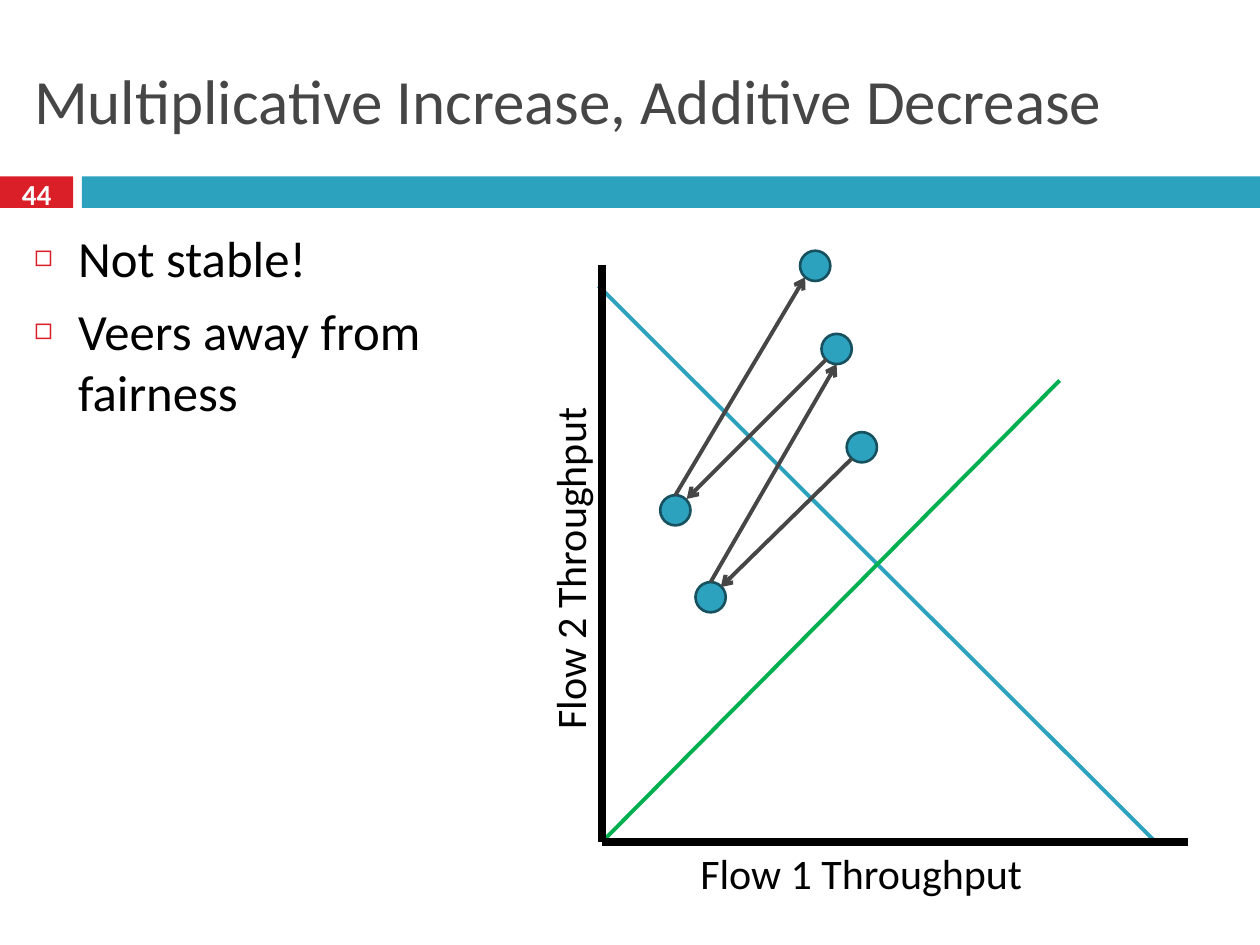
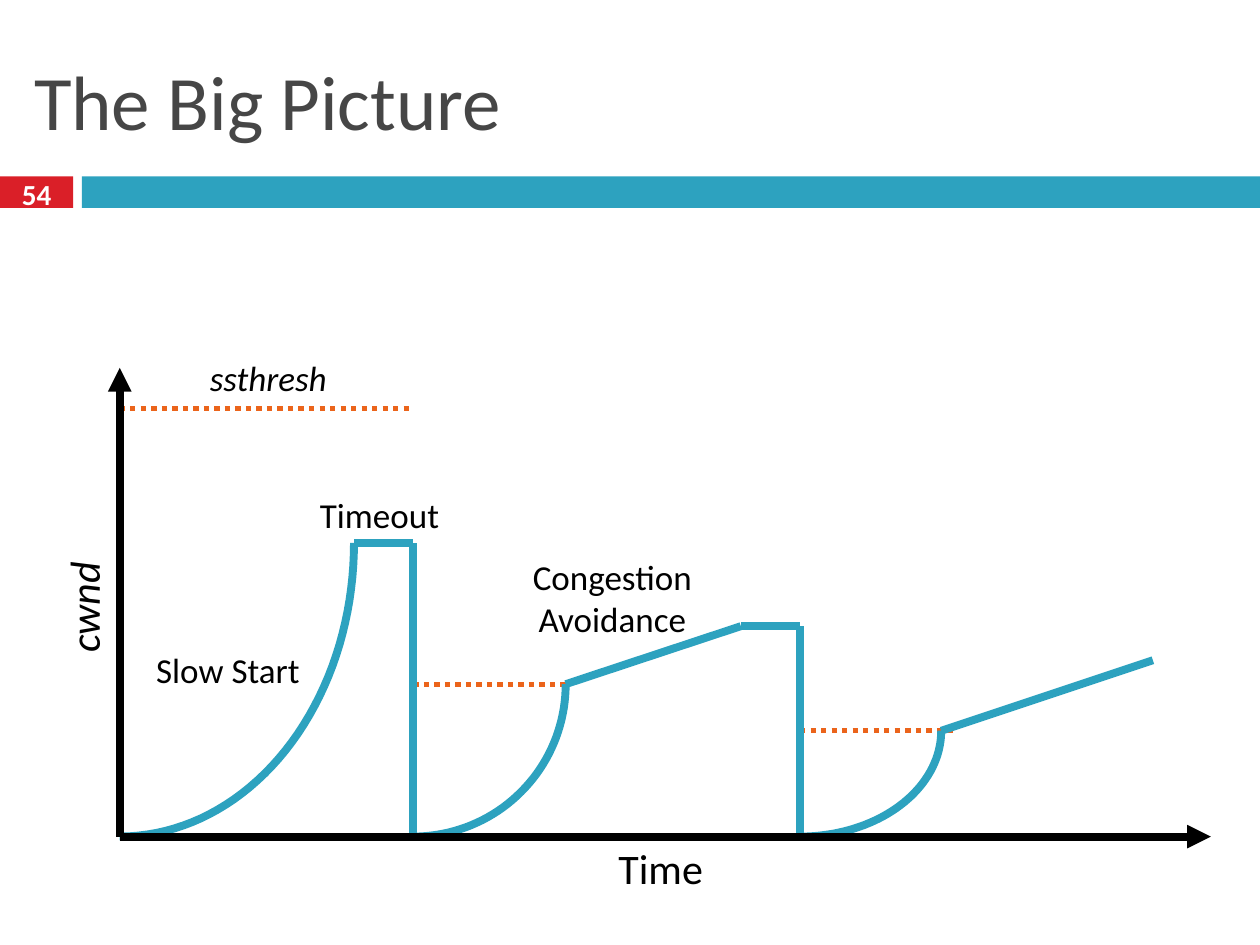
from math import cos, pi, sin

from pptx import Presentation
from pptx.dml.color import RGBColor
from pptx.enum.dml import MSO_LINE
from pptx.enum.shapes import MSO_CONNECTOR, MSO_SHAPE
from pptx.enum.text import MSO_ANCHOR as Anchor, MSO_AUTO_SIZE as AutoSize, PP_ALIGN as Align
from pptx.oxml import parse_xml
from pptx.oxml.ns import nsdecls, qn
from pptx.util import Inches, Pt

TEAL = RGBColor(0x2D, 0xA2, 0xBF)
DARK_TEAL = RGBColor(0x17, 0x51, 0x60)
RED = RGBColor(0xDA, 0x1F, 0x28)
GREEN = RGBColor(0x00, 0xB0, 0x50)
ORANGE = RGBColor(0xEB, 0x64, 0x1B)
GREY = RGBColor(0x46, 0x46, 0x46)
BLACK = RGBColor(0, 0, 0)
WHITE = RGBColor(0xFF, 0xFF, 0xFF)

FONT = "Calibri"
COLS, ROWS = 100, 75  # grid cells across and down the slide
TITLE_AND_BODY, TITLE_ONLY = 1, 5


def xml(tag, inner="", **attrs):
    """Make one DrawingML element."""
    pairs = " ".join(f'{k}="{v}"' for k, v in attrs.items())
    return parse_xml(f"<a:{tag} {nsdecls('a')} {pairs}>{inner}</a:{tag}>")


class Deck:
    """Holds the style and the current slide; places are in columns and rows."""

    def __init__(self):
        self.prs = Presentation()
        self.prs.slide_width, self.prs.slide_height = Inches(10), Inches(7.5)
        self.s = None

    def at(self, col, row):
        return (round(col * self.prs.slide_width / COLS),
                round(row * self.prs.slide_height / ROWS))

    def box(self, col, row, cols, rows):
        return self.at(col, row) + self.at(cols, rows)

    def run(self, p, text, size, color=BLACK, bold=False, italic=False):
        r = p.add_run()
        r.text = text
        f = r.font
        f.name, f.size, f.bold, f.italic = FONT, Pt(size), bold, italic
        f.color.rgb = color

    def place(self, sp, *box):
        sp.left, sp.top, sp.width, sp.height = self.box(*box)
        sp.text_frame.auto_size = AutoSize.NONE
        return sp.text_frame

    def slide(self, layout, title, size, number):
        """Start a slide with its title, band and page number."""
        self.s = self.prs.slides.add_slide(self.prs.slide_layouts[layout])
        self.shape(MSO_SHAPE.RECTANGLE, 0, 14, 5.8, 2.5, RED)
        self.shape(MSO_SHAPE.RECTANGLE, 6.5, 14, 93.5, 2.5, TEAL)
        tf = self.place(self.s.shapes.title, 1.7, 2.5, 96.7, 10.8)
        tf.vertical_anchor = Anchor.MIDDLE
        p = tf.paragraphs[0]
        p.alignment = Align.LEFT
        self.run(p, title, size, GREY)

        tf = self.s.shapes.add_textbox(*self.box(0, 13.7, 5.8, 3.3)).text_frame
        tf.word_wrap = True
        tf.vertical_anchor = Anchor.MIDDLE
        tf.margin_left = tf.margin_right = tf.margin_top = tf.margin_bottom = 0
        p = tf.paragraphs[0]
        p.alignment = Align.CENTER
        self.run(p, number, 16.6, WHITE, bold=True)

    def bullets(self, items, *box):
        tf = self.place(self.s.placeholders[1], *box)
        for i, item in enumerate(items):
            p = tf.add_paragraph() if i else tf.paragraphs[0]
            p.space_before = Pt(7)
            pPr = p._p.get_or_add_pPr()
            pPr.set("marL", str(Inches(0.35)))
            pPr.set("indent", str(-Inches(0.35)))
            pPr.append(xml("buClr", f'<a:srgbClr val="{RED}"/>'))
            pPr.append(xml("buSzPct", val=60000))
            pPr.append(xml("buChar", char="◻"))
            self.run(p, item, 29)

    def label(self, lines, *box, size=20, italic=False, turn=0, aligns=(Align.LEFT,)):
        sp = self.s.shapes.add_textbox(*self.box(*box))
        sp.rotation = turn
        tf = sp.text_frame
        tf.word_wrap = False
        tf.auto_size = AutoSize.SHAPE_TO_FIT_TEXT
        for i, (line, align) in enumerate(zip(lines, aligns)):
            p = tf.add_paragraph() if i else tf.paragraphs[0]
            p.alignment = align
            self.run(p, line, size, italic=italic)

    def shape(self, kind, col, row, cols, rows, fill, outline=None):
        sp = self.s.shapes.add_shape(kind, *self.box(col, row, cols, rows))
        sp.shadow.inherit = False
        sp.fill.solid()
        sp.fill.fore_color.rgb = fill
        if outline is None:
            sp.line.fill.background()
        else:
            sp.line.color.rgb, sp.line.width = outline, Pt(1.5)

    def dot(self, col, row, radius=1.2):
        self.shape(MSO_SHAPE.OVAL, col - radius, row - radius,
                   2 * radius, 2 * radius, TEAL, DARK_TEAL)

    def line(self, start, end, color, width, dash=None, arrow=None):
        c = self.s.shapes.add_connector(
            MSO_CONNECTOR.STRAIGHT, *self.at(*start), *self.at(*end))
        c.line.color.rgb, c.line.width = color, Pt(width)
        if dash:
            c.line.dash_style = dash
        spPr = c._element.spPr
        if arrow:
            spPr.find(qn("a:ln")).append(xml("tailEnd", type=arrow))
        spPr.append(xml("effectLst"))

    def curve(self, start, end, color, width, steps=40):
        """Quarter ellipse, flat at start and upright at end."""
        (x0, y0), (x1, y1) = start, end
        angles = [pi / 2 * i / steps for i in range(steps + 1)]
        pts = [self.at(x0 + (x1 - x0) * sin(a), y1 + (y0 - y1) * cos(a)) for a in angles]
        fb = self.s.shapes.build_freeform(*pts[0], scale=1.0)
        fb.add_line_segments(pts[1:], close=False)
        sp = fb.convert_to_shape()
        sp.shadow.inherit = False
        sp.fill.background()
        sp.line.color.rgb, sp.line.width = color, Pt(width)


def fairness_slide(d):
    d.slide(TITLE_AND_BODY, "Multiplicative Increase, Additive Decrease", 36, "44")
    d.bullets(["Not stable!", "Veers away from fairness"], 1.7, 17.5, 33.4, 55.8)
    d.label(["Flow 1 Throughput"], 54.6, 66.8, 30, 5, size=24)
    d.label(["Flow 2 Throughput"], 30.2, 41.4, 30, 5, size=24, turn=270)

    # Efficiency line, fairness line and axes
    origin = (47.8, 66.8)
    d.line((47.5, 22.7), (91.7, 66.8), TEAL, 2.25)
    d.line(origin, (84.1, 30.2), GREEN, 2.25)
    for end in ((94.3, 66.8), (47.8, 21)):
        d.line(origin, end, BLACK, 4.5)

    # States and the moves between them
    for centre in ((68.4, 35.5), (56.4, 47.4), (66.4, 27.7), (53.6, 40.5), (64.7, 21.1)):
        d.dot(*centre)
    moves = [((67.6, 36.4), (57.2, 46.6)), ((56.4, 46.2), (66.4, 28.9)),
             ((65.6, 28.5), (54.5, 39.6)), ((53.6, 39.3), (63.9, 22))]
    for start, end in moves:
        d.line(start, end, GREY, 2.25, arrow="arrow")


def big_picture_slide(d):
    d.slide(TITLE_ONLY, "The Big Picture", 44, "54")
    base = 66.4
    starts = (9.5, 32.8, 63.5)

    # Thresholds
    for x, end, y in zip(starts, (32.8, 44.9, 75.6), (32.4, 54.3, 58)):
        d.line((x, y), (end, y), ORANGE, 3, dash=MSO_LINE.ROUND_DOT)

    # Window size: slow start, then straight stretches until the next timeout
    rounds = [[(28.1, 43.1), (32.8, 43.1), (32.8, base)],
              [(44.9, 54.3), (58.8, 49.7), (63.5, 49.7), (63.5, base)],
              [(74.7, 58), (91.5, 52.4)]]
    for x, path in zip(starts, rounds):
        d.curve((x, base), path[0], TEAL, 4.5)
        for start, end in zip(path, path[1:]):
            d.line(start, end, TEAL, 4.5)

    # Axes
    for end in ((9.5, 29.2), (96.1, base)):
        d.line((9.5, base), end, BLACK, 4.5, arrow="triangle")

    # Labels
    d.label(["Time"], 48.1, 66.4, 9.4, 5.1, size=24)
    d.label(["cwnd"], 1.7, 45.3, 9.9, 5.1, size=24, italic=True, turn=270)
    d.label(["Timeout"], 24.4, 38.7, 12.1, 4.4)
    d.label(["Slow Start"], 11.4, 51, 14.8, 4.4)
    d.label(["Congestion", "Avoidance"], 41.3, 43.6, 16.2, 7.7,
            aligns=(Align.LEFT, Align.CENTER))
    d.label(["ssthresh"], 15, 27.8, 12.6, 4.4, italic=True, aligns=(Align.CENTER,))


def main():
    d = Deck()
    fairness_slide(d)
    big_picture_slide(d)
    d.prs.save("out.pptx")


if __name__ == "__main__":
    main()
